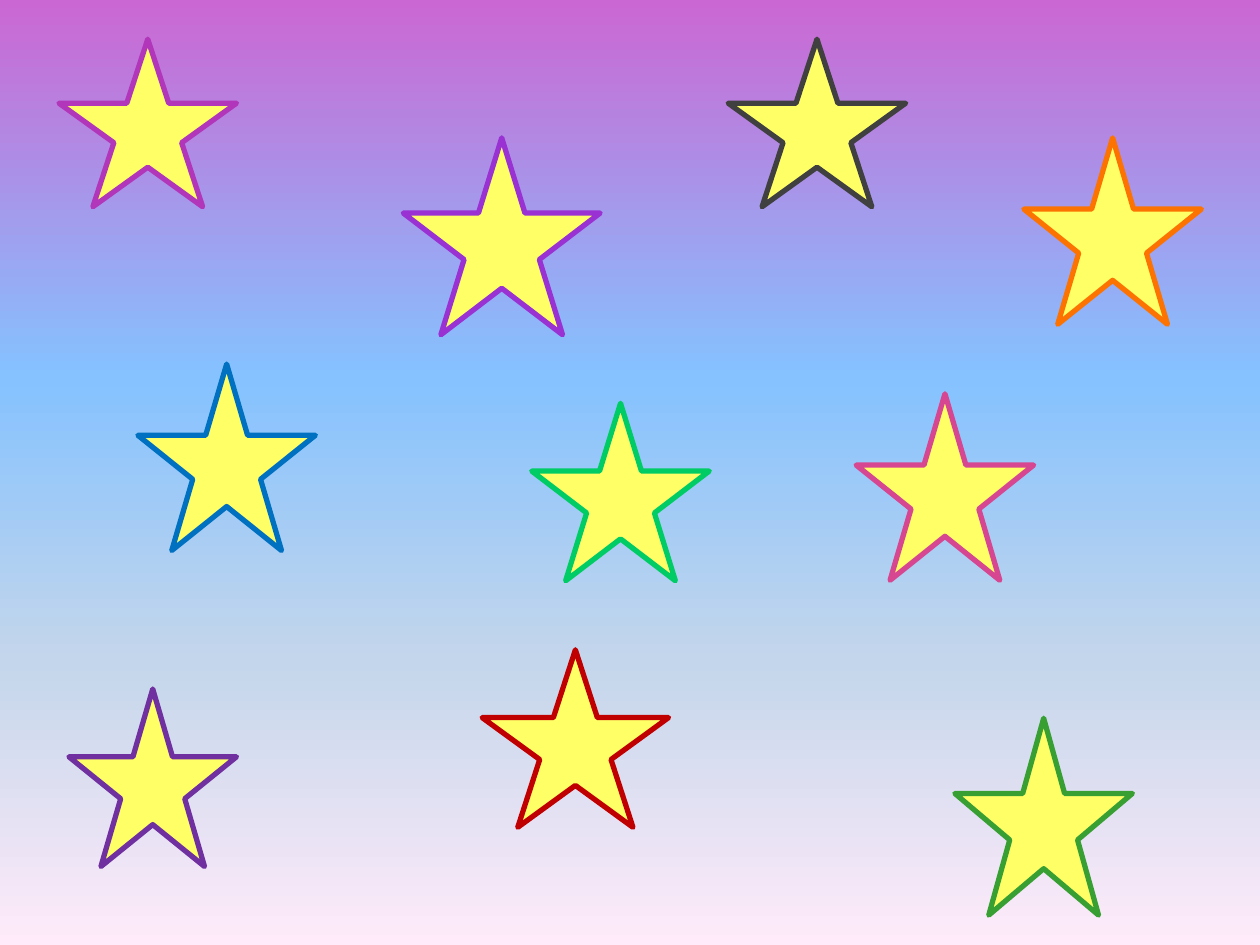
import lxml.etree
import pptx
import pptx.dml.color
import pptx.enum.shapes
import pptx.oxml.ns
import pptx.util

Cm = pptx.util.Cm
RGBColor = pptx.dml.color.RGBColor
qn = pptx.oxml.ns.qn

COLORS = {
    "star": "FFFF66",
    "magenta": "B136BA",
    "blue": "0070C0",
    "purple": "7030A0",
    "charcoal": "404040",
    "pink": "D64691",
    "orange": "FC7302",
    "red": "C00000",
    "green": "389F33",
    "violet": "9931D3",
    "mint": "00CC66",
    "sky_top": "CB67D3",
    "sky_upper": "85C2FF",
    "sky_lower": "C4D6EB",
    "sky_bottom": "FFEBFA",
}
SKY_STOPS = [(0, "sky_top"), (40, "sky_upper"), (70, "sky_lower"), (100, "sky_bottom")]
STARS = [
    ("magenta", 1.19, 0.79, 3.58, 3.38),
    ("blue", 2.78, 7.34, 3.58, 3.76),
    ("purple", 1.39, 13.89, 3.38, 3.58),
    ("charcoal", 14.68, 0.79, 3.58, 3.38),
    ("pink", 17.26, 7.94, 3.58, 3.76),
    ("orange", 20.64, 2.78, 3.58, 3.76),
    ("red", 9.72, 13.1, 3.76, 3.58),
    ("green", 19.25, 14.48, 3.58, 3.97),
    ("violet", 8.13, 2.78, 3.97, 3.97),
    ("mint", 10.72, 8.13, 3.58, 3.58),
]

deck = pptx.Presentation()
for name, value in {"slide_width": Cm(25.4), "slide_height": Cm(19.05)}.items():
    setattr(deck, name, value)
page = deck.slides.add_slide(deck.slide_layouts[6])

sky = page.background.fill
sky.gradient()
sky.gradient_angle = 270
stop_list = page.element.find(".//" + qn("a:gsLst"))
for stop in list(stop_list):
    stop_list.remove(stop)
for percent, color in SKY_STOPS:
    stop = lxml.etree.SubElement(stop_list, qn("a:gs"), pos=str(percent * 1000))
    lxml.etree.SubElement(stop, qn("a:srgbClr"), val=COLORS[color])

for outline, left, top, width, height in STARS:
    star = page.shapes.add_shape(
        pptx.enum.shapes.MSO_SHAPE.STAR_5_POINT, Cm(left), Cm(top), Cm(width), Cm(height)
    )
    star.shadow.inherit = False
    star.fill.solid()
    star.fill.fore_color.rgb = RGBColor.from_string(COLORS["star"])
    star.line.color.rgb = RGBColor.from_string(COLORS[outline])
    star.line.width = pptx.util.Pt(3)

deck.save("out.pptx")
